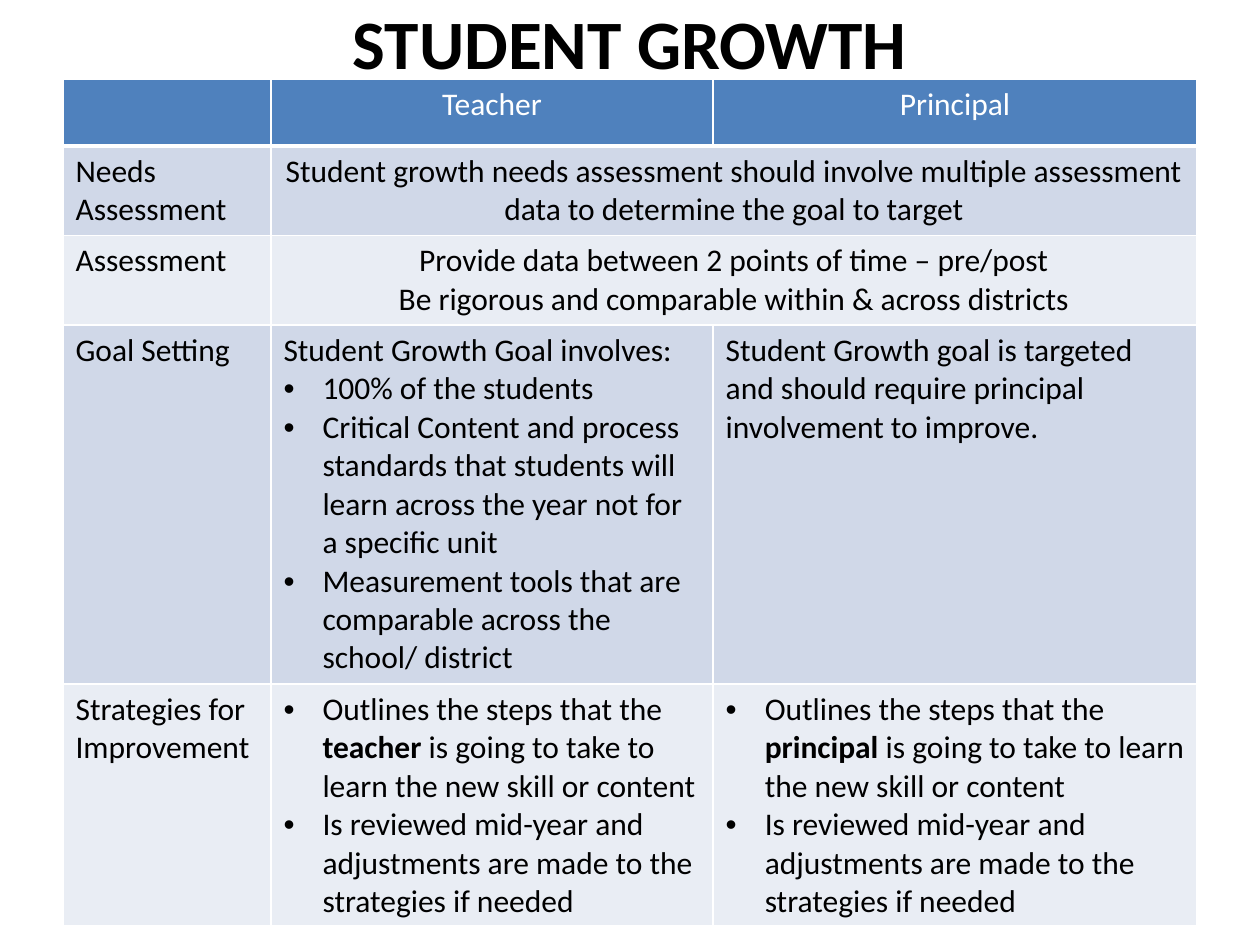
from dataclasses import dataclass

from lxml import etree
from pptx import Presentation
from pptx.dml.color import RGBColor
from pptx.enum import text
from pptx.oxml import ns
from pptx.util import Inches, Pt


@dataclass(frozen=True)
class Theme:
    font: str = "Calibri"
    title_size: float = 39.6
    body_size: float = 18
    ink: str = "000000"
    white: str = "FFFFFF"
    header: str = "4F81BD"
    bands: tuple = ("D0D8E8", "E9EDF4")


THEME = Theme()
COLUMNS = (1.65, 3.51, 3.84)
ROW_HEIGHTS = (0.53, 0.71, 0.71, 2.85, 1.92)
REVIEW = "• Is reviewed mid-year and adjustments are made to the strategies if needed"

# One list of paragraphs per cell; "• " marks a bullet, "*" encloses bold words.
# A body row with two cells merges the last two columns.
ROWS = (
    ([], ["Teacher"], ["Principal"]),
    (["Needs Assessment"],
     ["Student growth needs assessment should involve multiple assessment "
      "data to determine the goal to target"]),
    (["Assessment"],
     ["Provide data between 2 points of time – pre/post",
      "Be rigorous and comparable within & across districts"]),
    (["Goal Setting"],
     ["Student Growth Goal involves:",
      "• 100% of the students",
      "• Critical Content and process standards that students will learn "
      "across the year not for a specific unit",
      "• Measurement tools that are comparable across the school/ district"],
     ["Student Growth goal is targeted and should require principal "
      "involvement to improve."]),
    (["Strategies for Improvement"],
     ["• Outlines the steps that the *teacher *is going to take to learn "
      "the new skill or content", REVIEW],
     ["• Outlines the steps that the *principal* is going to take to learn "
      "the new skill or content", REVIEW]),
)


def style_run(r, size, color, bold=False):
    r.font.name = THEME.font
    r.font.size = Pt(size)
    r.font.bold = bold
    r.font.color.rgb = RGBColor.from_string(color)


def add_bullet(p):
    pPr = p._p.get_or_add_pPr()
    indent = Inches(0.31)
    pPr.set("marL", str(indent))
    pPr.set("indent", str(-indent))
    etree.SubElement(pPr, ns.qn("a:buFont"), typeface="Arial")
    etree.SubElement(pPr, ns.qn("a:buChar"), char="•")


def set_borders(cell, bottom):
    tcPr = cell._tc.get_or_add_tcPr()
    widths = {"lnL": 1, "lnR": 1, "lnT": 1, "lnB": bottom}
    for i, (side, width) in enumerate(widths.items()):
        ln = etree.Element(ns.qn(f"a:{side}"), w=str(Pt(width)))
        fill = etree.SubElement(ln, ns.qn("a:solidFill"))
        etree.SubElement(fill, ns.qn("a:srgbClr"), val=THEME.white)
        tcPr.insert(i, ln)


def write_cell(cell, paragraphs, color, centered):
    tf = cell.text_frame
    for i, line in enumerate(paragraphs):
        p = tf.add_paragraph() if i else tf.paragraphs[0]
        if centered:
            p.alignment = text.PP_ALIGN.CENTER
        if line.startswith("• "):
            add_bullet(p)
        for j, part in enumerate(line.removeprefix("• ").split("*")):
            r = p.add_run()
            r.text = part
            style_run(r, THEME.body_size, color, bold=j % 2 == 1)


def add_title(s, left, top, width, height):
    tf = s.shapes.add_textbox(left, top, width, height).text_frame
    tf.word_wrap = True
    tf.vertical_anchor = text.MSO_ANCHOR.MIDDLE
    tf.text = "STUDENT GROWTH"
    p = tf.paragraphs[0]
    p.alignment = text.PP_ALIGN.CENTER
    style_run(p.runs[0], THEME.title_size, THEME.ink, bold=True)


def add_growth_table(s, left, top, width, height):
    table = s.shapes.add_table(len(ROWS), len(COLUMNS), left, top, width, height).table
    for column, share in zip(table.columns, COLUMNS):
        column.width = int(width * share / sum(COLUMNS))
    for row, share in zip(table.rows, ROW_HEIGHTS):
        row.height = int(height * share / sum(ROW_HEIGHTS))

    for y, contents in enumerate(ROWS):
        is_header = y == 0
        merged = len(contents) < len(COLUMNS)
        for cell in table.rows[y].cells:
            cell.fill.solid()
            fill = THEME.header if is_header else THEME.bands[(y - 1) % 2]
            cell.fill.fore_color.rgb = RGBColor.from_string(fill)
            set_borders(cell, bottom=3 if is_header else 1)
        if merged:
            table.cell(y, 1).merge(table.cell(y, 2))
        for x, paragraphs in enumerate(contents):
            write_cell(table.cell(y, x), paragraphs,
                       THEME.white if is_header else THEME.ink,
                       centered=is_header or (merged and x == 1))


def main():
    prs = Presentation()
    prs.slide_width, prs.slide_height = Inches(10), Inches(7.5)
    s = prs.slides.add_slide(prs.slide_layouts[6])
    add_title(s, Inches(0.5), Inches(0.03), Inches(9), Inches(0.6))
    add_growth_table(s, Inches(0.5), Inches(0.63), Inches(9), Inches(sum(ROW_HEIGHTS)))
    prs.save("out.pptx")


if __name__ == "__main__":
    main()
